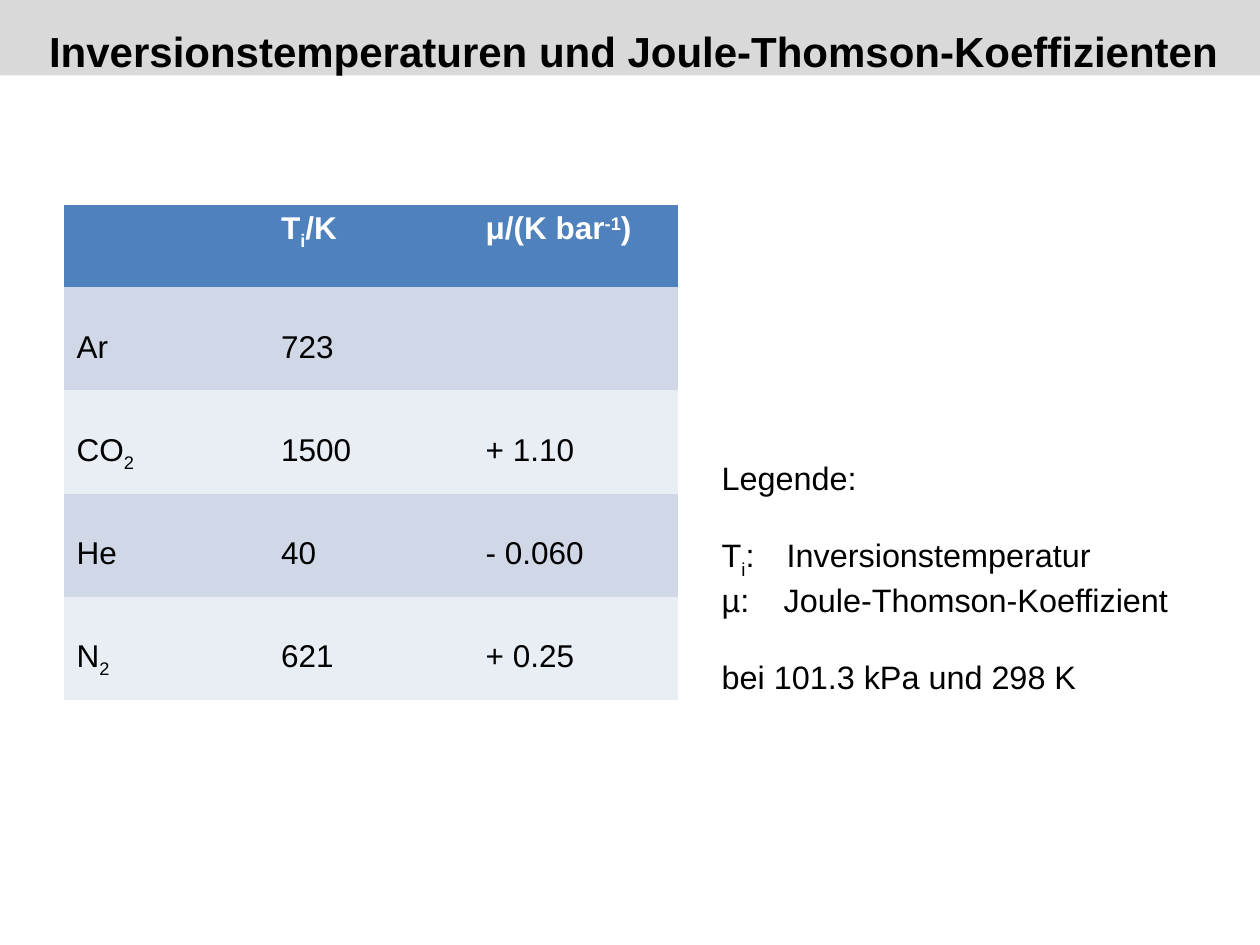
from dataclasses import dataclass

from lxml import etree
from pptx import Presentation
from pptx.dml.color import RGBColor
from pptx.enum.shapes import MSO_SHAPE
from pptx.oxml.ns import qn
from pptx.util import Cm, Pt

RECTANGLE = MSO_SHAPE.RECTANGLE

BLACK = RGBColor(0x00, 0x00, 0x00)
WHITE = RGBColor(0xFF, 0xFF, 0xFF)
BAND_GREY = RGBColor(0xD9, 0xD9, 0xD9)
HEADER_BLUE = RGBColor(0x4F, 0x81, 0xBD)
ROW_DARK = RGBColor(0xD0, 0xD8, 0xE8)
ROW_LIGHT = RGBColor(0xE9, 0xED, 0xF4)

NO_TABLE_STYLE = "{2D5ABB26-0587-4C30-8999-92F81FD0307C}"


@dataclass(frozen=True)
class Piece:
    """Text with a baseline shift in percent."""
    text: str
    baseline: int = 0


@dataclass(frozen=True)
class TextStyle:
    size: float
    color: RGBColor = BLACK
    bold: bool = False


@dataclass(frozen=True)
class Line:
    pieces: tuple[Piece, ...]
    space_before: float = 0
    tab_stop: float = 0


TITLE_STYLE = TextStyle(24, bold=True)
HEADER_STYLE = TextStyle(18, WHITE, True)
BODY_STYLE = TextStyle(18)
LEGEND_STYLE = TextStyle(18.5)

TITLE = Line((Piece("Inversionstemperaturen und Joule-Thomson-Koeffizienten"),))

TABLE_ROWS = (
    ((), (Piece("T"), Piece("i", -25), Piece("/K")),
     (Piece("μ/(K bar"), Piece("-1", 30), Piece(")"))),
    ((Piece("Ar"),), (Piece("723"),), ()),
    ((Piece("CO"), Piece("2", -25)), (Piece("1500"),), (Piece("+ 1.10"),)),
    ((Piece("He"),), (Piece("40"),), (Piece("- 0.060"),)),
    ((Piece("N"), Piece("2", -25)), (Piece("621"),), (Piece("+ 0.25"),)),
)

LEGEND_GAP = 21.3
LEGEND_LINES = (
    Line((Piece("Legende:"),)),
    Line((Piece("T"), Piece("i", -30), Piece(":\tInversionstemperatur")),
         LEGEND_GAP, 1.31),
    Line((Piece("µ:\tJoule-Thomson-Koeffizient"),), tab_stop=1.25),
    Line((Piece("bei 101.3 kPa und 298 K"),), LEGEND_GAP),
)


def write_pieces(paragraph, pieces: tuple[Piece, ...], style: TextStyle) -> None:
    font_values = {"name": "Arial", "size": Pt(style.size), "bold": style.bold}
    for piece in pieces:
        run = paragraph.add_run()
        run.text = piece.text
        for name, value in font_values.items():
            setattr(run.font, name, value)
        run.font.color.rgb = style.color
        if piece.baseline:
            run._r.get_or_add_rPr().set("baseline", str(piece.baseline * 1000))


def add_tab_stop(paragraph, position: float) -> None:
    properties = paragraph._p.get_or_add_pPr()
    tab_list = etree.SubElement(properties, qn("a:tabLst"))
    etree.SubElement(tab_list, qn("a:tab"), pos=str(Cm(position)), algn="l")


def add_text(slide, left: float, top: float, width: float, height: float,
             lines: tuple[Line, ...], style: TextStyle) -> None:
    box = slide.shapes.add_textbox(Cm(left), Cm(top), Cm(width), Cm(height))
    frame = box.text_frame
    frame.word_wrap = True
    for index, line in enumerate(lines):
        paragraph = frame.add_paragraph() if index else frame.paragraphs[0]
        paragraph.space_before = Pt(line.space_before)
        if line.tab_stop:
            add_tab_stop(paragraph, line.tab_stop)
        write_pieces(paragraph, line.pieces, style)


def add_title_band(slide, width: int) -> None:
    band = slide.shapes.add_shape(RECTANGLE, 0, 0, width, Cm(1.52))
    band.shadow.inherit = False
    band.fill.solid()
    band.fill.fore_color.rgb = BAND_GREY
    band.line.fill.background()


def add_gas_table(slide) -> None:
    column_count = len(TABLE_ROWS[0])
    frame = slide.shapes.add_table(len(TABLE_ROWS), column_count,
                                   Cm(1.29), Cm(4.13), Cm(12.37), Cm(10))
    for style_id in frame.element.iter(qn("a:tableStyleId")):
        style_id.text = NO_TABLE_STYLE
    table = frame.table
    for row_index, row in enumerate(TABLE_ROWS):
        is_header = row_index == 0
        table.rows[row_index].height = Cm(1.66 if is_header else 2.08)
        if is_header:
            fill, style, margin_top = HEADER_BLUE, HEADER_STYLE, Cm(0.13)
        else:
            fill = ROW_DARK if row_index % 2 else ROW_LIGHT
            style, margin_top = BODY_STYLE, Cm(0.86)
        for column_index, pieces in enumerate(row):
            cell = table.cell(row_index, column_index)
            cell.fill.solid()
            cell.fill.fore_color.rgb = fill
            cell.margin_top = margin_top
            write_pieces(cell.text_frame.paragraphs[0], pieces, style)


def main() -> None:
    presentation = Presentation()
    presentation.slide_width = Cm(25.4)
    presentation.slide_height = Cm(19.05)
    slide = presentation.slides.add_slide(presentation.slide_layouts[6])

    # Table and its legend
    add_title_band(slide, presentation.slide_width)
    add_gas_table(slide)
    add_text(slide, 14.3, 9.12, 11.1, 5, LEGEND_LINES, LEGEND_STYLE)

    # Title on the grey band
    add_text(slide, 0.74, 0.39, 24.6, 1.3, (TITLE,), TITLE_STYLE)

    presentation.save("out.pptx")


if __name__ == "__main__":
    main()
